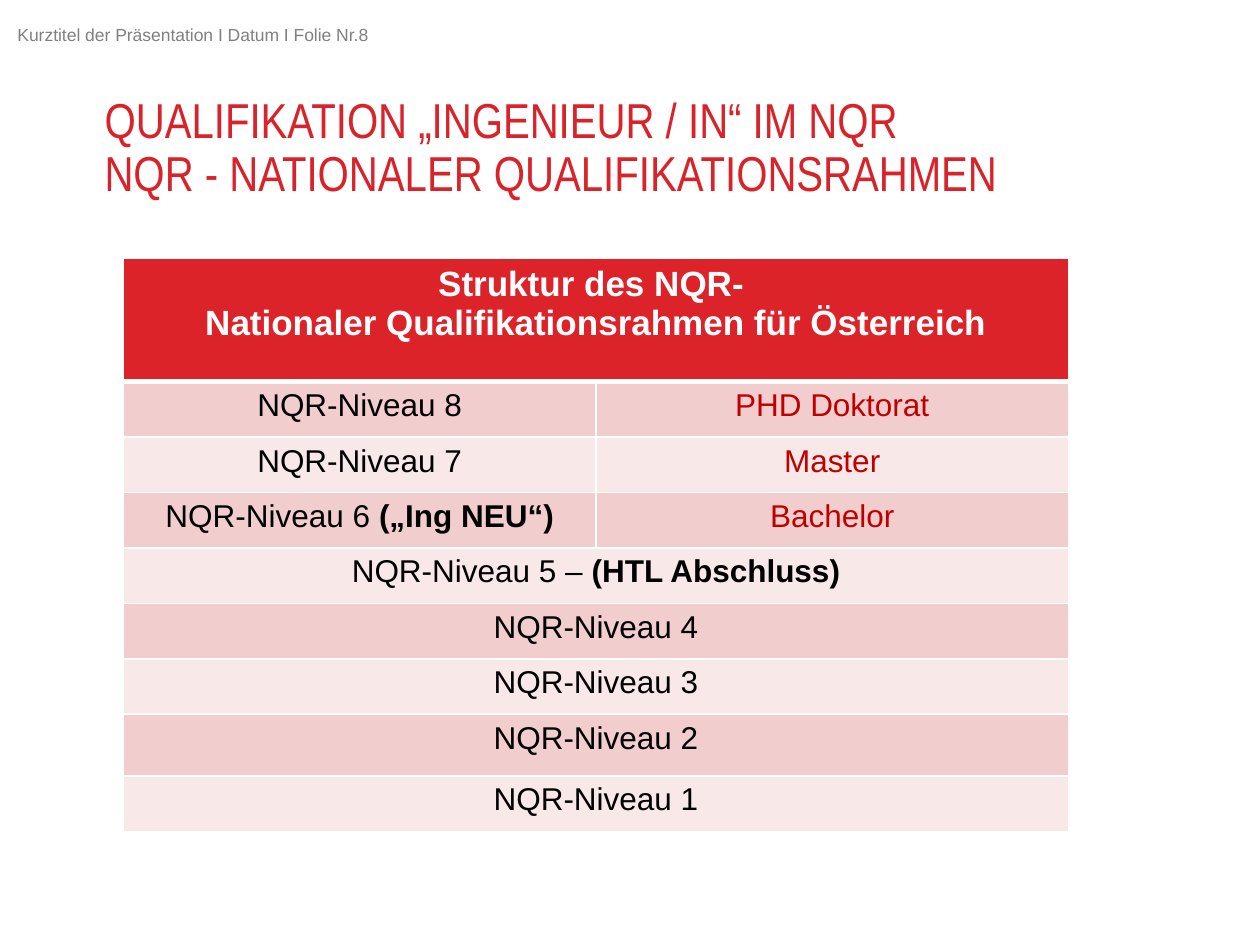
from dataclasses import dataclass

from lxml import etree
from pptx import Presentation
from pptx import util as u
from pptx.dml.color import RGBColor
from pptx.enum import text
from pptx.oxml.ns import qn


@dataclass(frozen=True)
class Theme:
    red: str = "DD232A"
    title_red: str = "D8232A"
    degree_red: str = "C00000"
    gray: str = "808080"
    black: str = "000000"
    white: str = "FFFFFF"
    bands: tuple = ("F2CDCD", "F9E8E8")
    body_font: str = "Arial"
    title_font: str = "Arial Narrow"
    footer_size: int = 10
    title_size: int = 28
    header_size: int = 20
    level_size: int = 18


@dataclass(frozen=True)
class Level:
    label: str
    remark: str = ""
    degree: str = ""
    height: float = 0.44


@dataclass(frozen=True)
class Box:
    left: float
    top: float
    width: float
    height: float

    def emu(self) -> list:
        return [u.Inches(v) for v in (self.left, self.top, self.width, self.height)]


THEME = Theme()
LEVELS = [
    Level("NQR-Niveau 8", degree="PHD Doktorat"),
    Level("NQR-Niveau 7", degree="Master"),
    Level("NQR-Niveau 6 ", "(„Ing NEU“)", "Bachelor"),
    Level("NQR-Niveau 5 – ", "(HTL Abschluss)"),
    Level("NQR-Niveau 4"),
    Level("NQR-Niveau 3"),
    Level("NQR-Niveau 2", height=0.49),
    Level("NQR-Niveau 1"),
]
HEADER = ("Struktur des NQR- ", "Nationaler Qualifikationsrahmen für Österreich")
HEADER_HEIGHT = 0.98


def add_run(paragraph, words: str, size: int, color: str,
            bold: bool = False, font: str = THEME.body_font) -> None:
    run = paragraph.add_run()
    run.text = words
    for name, value in {"name": font, "size": u.Pt(size), "bold": bold}.items():
        setattr(run.font, name, value)
    run.font.color.rgb = RGBColor.from_string(color)


def add_text_box(slide, box: Box, **frame_format):
    frame = slide.shapes.add_textbox(*box.emu()).text_frame
    for name, value in {"word_wrap": True, **frame_format}.items():
        setattr(frame, name, value)
    return frame.paragraphs[0]


def style_cell(cell, fill: str, top: int = 1, bottom: int = 1) -> None:
    cell.fill.solid()
    cell.fill.fore_color.rgb = RGBColor.from_string(fill)
    properties = cell._tc.get_or_add_tcPr()
    edges = {"a:lnL": 1, "a:lnR": 1, "a:lnT": top, "a:lnB": bottom}
    for position, (edge, points) in enumerate(edges.items()):
        line = etree.Element(qn(edge), w=str(u.Pt(points)))
        solid = etree.SubElement(line, qn("a:solidFill"))
        etree.SubElement(solid, qn("a:srgbClr"), val=THEME.white)
        properties.insert(position, line)


def fill_cell(cell, paragraphs: list) -> None:
    frame = cell.text_frame
    for index, runs in enumerate(paragraphs):
        paragraph = frame.add_paragraph() if index else frame.paragraphs[0]
        paragraph.alignment = text.PP_ALIGN.CENTER
        for run in runs:
            add_run(paragraph, *run)


def add_levels_table(slide, box: Box) -> None:
    table = slide.shapes.add_table(len(LEVELS) + 1, 2, *box.emu()).table
    heights = [HEADER_HEIGHT] + [level.height for level in LEVELS]
    for row, height in zip(table.rows, heights):
        row.height = u.Inches(height)

    for column in range(2):
        style_cell(table.cell(0, column), THEME.red, bottom=3)
    table.cell(0, 0).merge(table.cell(0, 1))
    fill_cell(table.cell(0, 0),
              [[(line, THEME.header_size, THEME.white, True)] for line in HEADER])

    for index, level in enumerate(LEVELS):
        left, right = (table.cell(index + 1, column) for column in range(2))
        for cell in (left, right):
            style_cell(cell, THEME.bands[index % 2], top=1 if index else 3)
        runs = [(level.label, THEME.level_size, THEME.black)]
        if level.remark:
            runs.append((level.remark, THEME.level_size, THEME.black, True))
        if level.degree:
            fill_cell(right, [[(level.degree, THEME.level_size, THEME.degree_red)]])
        else:
            left.merge(right)
        fill_cell(left, [runs])


def main() -> None:
    deck = Presentation()
    deck.slide_width, deck.slide_height = u.Inches(10), u.Inches(7.5)
    slide = deck.slides.add_slide(deck.slide_layouts[6])

    running_head = add_text_box(slide, Box(0.04, 0.14, 4.87, 0.27))
    add_run(running_head, "Kurztitel der Präsentation I Datum I Folie Nr.8",
            THEME.footer_size, THEME.gray)

    no_margins = {f"margin_{side}": 0 for side in ("left", "top", "right", "bottom")}
    title = add_text_box(slide, Box(0.83, 0.76, 8.35, 1.02), **no_margins)
    title.line_spacing = 0.9
    title_format = (THEME.title_size, THEME.title_red, False, THEME.title_font)
    add_run(title, "QUALIFIKATION „INGENIEUR / IN“ IM NQR", *title_format)
    title.add_line_break()
    add_run(title, "NQR - NATIONALER QUALIFIKATIONSRAHMEN", *title_format)

    add_levels_table(slide, Box(0.98, 2.05, 7.5, 4.55))
    deck.save("out.pptx")


if __name__ == "__main__":
    main()
